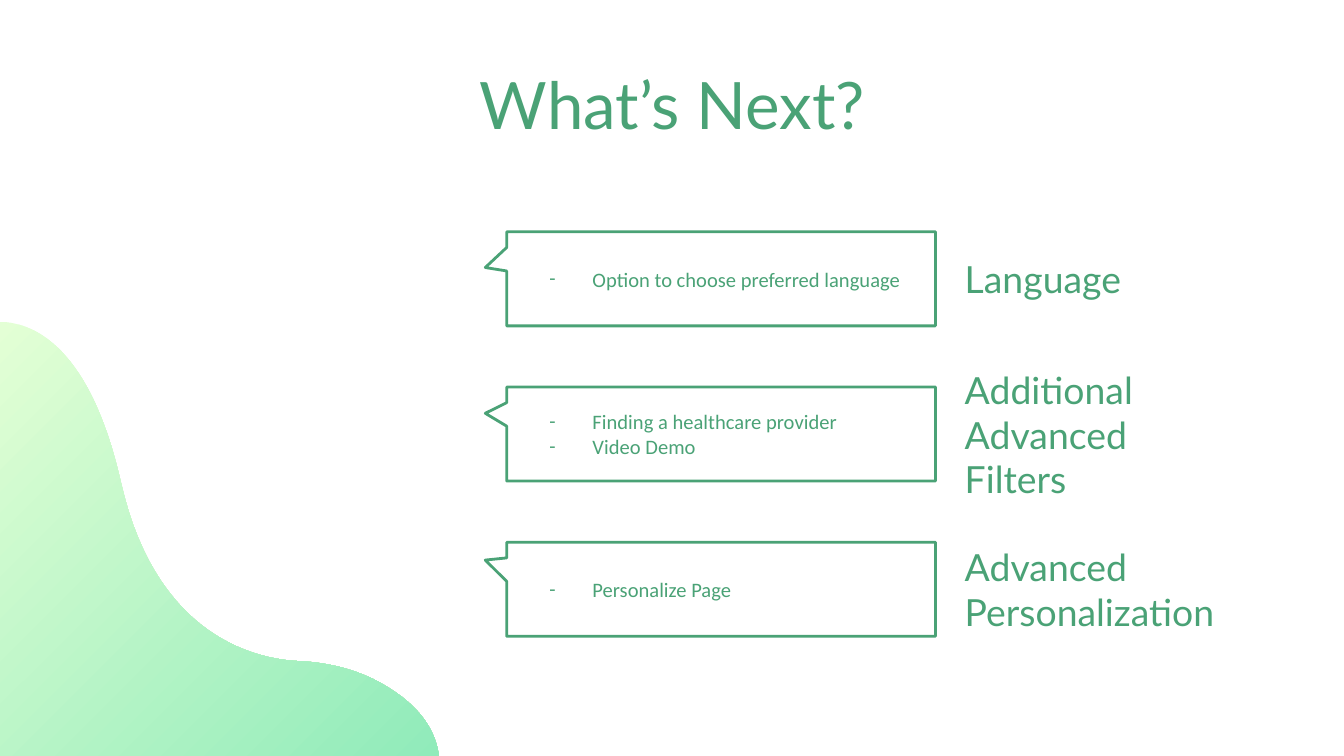
import pptx
import pptx.dml.color
import pptx.enum.shapes
import pptx.enum.text
import pptx.oxml.ns
import pptx.util
import lxml.etree

EMU_PER_PX = 4572
GREEN = "4AA276"
PALE_LIME = "E3FFD5"
MINT = "90EBBA"
CURVE_STEPS = 30


def px(length):
    return pptx.util.Emu(round(length * EMU_PER_PX))


def color(hex_string):
    return pptx.dml.color.RGBColor.from_string(hex_string)


def add_element(parent, tag, **attributes):
    return lxml.etree.SubElement(parent, pptx.oxml.ns.qn(tag), **attributes)


def bezier_points(*controls):
    for step in range(1, CURVE_STEPS + 1):
        t = step / CURVE_STEPS
        weights = ((1 - t) ** 3, 3 * t * (1 - t) ** 2, 3 * t ** 2 * (1 - t), t ** 3)
        yield tuple(px(sum(w * p[axis] for w, p in zip(weights, controls))) for axis in (0, 1))


class SlideBuilder:
    def __init__(self, slide, accent):
        self.slide = slide
        self.accent = accent

    def wave(self, start, curves, corner):
        points = []
        current = start
        for curve in curves:
            points.extend(bezier_points(current, *curve))
            current = curve[-1]
        points.append(tuple(px(value) for value in corner))
        outline = self.slide.shapes.build_freeform(px(start[0]), px(start[1]))
        outline.add_line_segments(points, close=True)
        shape = outline.convert_to_shape()
        shape.shadow.inherit = False
        shape.line.fill.background()
        shape.fill.gradient()
        shape.fill.gradient_angle = 315
        for stop, position, hex_string in zip(shape.fill.gradient_stops, (0, 1), (PALE_LIME, MINT)):
            stop.position = position
            stop.color.rgb = color(hex_string)

    def callout(self, left, top, width, height, tip):
        kind = pptx.enum.shapes.MSO_SHAPE.RECTANGULAR_CALLOUT
        shape = self.slide.shapes.add_shape(kind, px(left), px(top), px(width), px(height))
        shape.adjustments[0], shape.adjustments[1] = tip
        shape.shadow.inherit = False
        shape.fill.background()
        shape.line.color.rgb = color(self.accent)
        shape.line.width = pptx.util.Pt(1.5)
        add_element(shape._element.spPr.ln, "a:round")

    def text(self, left, top, width, height, lines, size, font="Lato", centered=False, dashed=False):
        box = self.slide.shapes.add_textbox(px(left), px(top), px(width), px(height))
        frame = box.text_frame
        frame.word_wrap = True
        frame.vertical_anchor = pptx.enum.text.MSO_ANCHOR.MIDDLE
        frame.margin_left = frame.margin_right = px(20)
        frame.margin_top = frame.margin_bottom = px(20)
        frame.text = "\n".join(lines)
        for paragraph in frame.paragraphs:
            if centered:
                paragraph.alignment = pptx.enum.text.PP_ALIGN.CENTER
            if dashed:
                self.dash(paragraph, font)
            for run in paragraph.runs:
                run.font.name = font
                run.font.size = pptx.util.Pt(size)
                run.font.color.rgb = color(self.accent)

    def dash(self, paragraph, font):
        properties = paragraph._p.get_or_add_pPr()
        properties.set("marL", str(px(100)))
        properties.set("indent", str(px(-64)))
        add_element(add_element(properties, "a:buClr"), "a:srgbClr", val=self.accent)
        add_element(properties, "a:buFont", typeface=font)
        add_element(properties, "a:buChar", char="-")


def main():
    presentation = pptx.Presentation()
    presentation.slide_width = px(2000)
    presentation.slide_height = px(1125)
    slide = presentation.slides.add_slide(presentation.slide_layouts[6])
    builder = SlideBuilder(slide, GREEN)

    builder.wave(
        (0, 479),
        [
            ((50, 480), (134, 516), (180, 718)),
            ((232, 950), (384, 982), (446, 984)),
            ((484, 986), (520, 994), (554, 1010)),
            ((598, 1032), (646, 1068), (653, 1125)),
        ],
        (0, 1125),
    )
    builder.text(158, 119, 1686, 70, ["What’s Next?"], 35, centered=True)

    steps = [
        ("Language", ["Option to choose preferred language"], (-0.55, -0.12)),
        ("Additional Advanced Filters", ["Finding a healthcare provider", "Video Demo"], (-0.55, -0.22)),
        ("Advanced Personalization", ["Personalize Page"], (-0.55, -0.31)),
    ]
    first_top, pitch, height = 345, 231, 140
    for index, (heading, details, tip) in enumerate(steps):
        top = first_top + index * pitch
        builder.callout(754, top, 638, height, tip)
        builder.text(762, top, 624, height, details, 11, font="Calibri", dashed=True)
        builder.text(1416, top, 428, height, [heading], 20)

    presentation.save("out.pptx")


if __name__ == "__main__":
    main()
